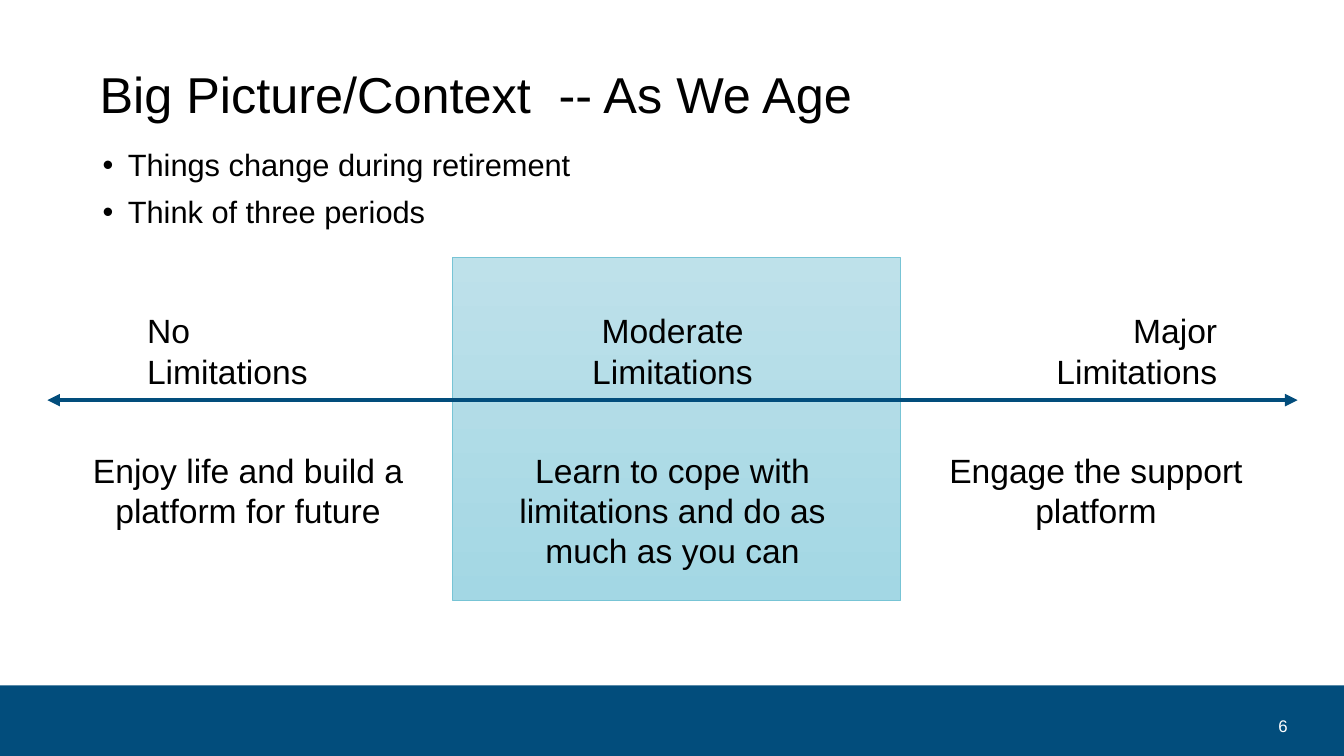
from lxml import etree
from pptx import Presentation
from pptx import util as u
from pptx.dml.color import RGBColor
from pptx.enum import shapes, text
from pptx.oxml.ns import qn

PX = 9144  # 100 px to the inch
COLORS = {
    "navy": "024D7C",
    "panel_top": "BEE1EA",
    "panel_bottom": "A3D7E4",
    "panel_edge": "77C4D5",
    "black": "000000",
    "white": "FFFFFF",
}
LEFT, CENTER, RIGHT = text.PP_ALIGN.LEFT, text.PP_ALIGN.CENTER, text.PP_ALIGN.RIGHT
TOP, MIDDLE = text.MSO_ANCHOR.TOP, text.MSO_ANCHOR.MIDDLE


def rgb(name):
    return RGBColor.from_string(COLORS[name])


def add_text(box, paragraphs, size, align=LEFT, color="black", anchor=TOP):
    """Add a wrapped text box; a newline inside a paragraph is a line break."""
    tf = s.shapes.add_textbox(*(v * PX for v in box)).text_frame
    tf.word_wrap = True
    tf.vertical_anchor = anchor
    for i, words in enumerate(paragraphs):
        p = tf.paragraphs[0] if i == 0 else tf.add_paragraph()
        p.alignment = align
        for j, line in enumerate(words.split("\n")):
            if j:
                p.add_line_break()
            r = p.add_run()
            r.text = line
            r.font.name = "Arial"
            r.font.size = u.Pt(size)
            r.font.color.rgb = rgb(color)
    return tf


prs = Presentation()
prs.slide_width, prs.slide_height = 1333 * PX, 750 * PX
s = prs.slides.add_slide(prs.slide_layouts[6])

# Footer band and middle-period panel
footer, panel = (
    s.shapes.add_shape(shapes.MSO_SHAPE.RECTANGLE, *(v * PX for v in box))
    for box in ((0, 680, 1333, 70), (449, 255, 444, 341))
)
footer.shadow.inherit = panel.shadow.inherit = False
footer.fill.solid()
footer.fill.fore_color.rgb = rgb("navy")
footer.line.fill.background()

panel.fill.gradient()
panel.fill.gradient_angle = 270
for stop, name in zip(panel.fill.gradient_stops, ("panel_top", "panel_bottom")):
    stop.color.rgb = rgb(name)
    stop.position = 0 if name == "panel_top" else 1
panel.line.color.rgb = rgb("panel_edge")
panel.line.width = u.Pt(0.5)

# Title, bullets and slide number
title = add_text((89, 36, 1150, 121), ["Big Picture/Context  -- As We Age"], 36, anchor=MIDDLE)
title.paragraphs[0].line_spacing = 0.9

bullets = add_text((92, 144, 1150, 121),
                   ["Things change during retirement", "Think of three periods"], 22)
for i, p in enumerate(bullets.paragraphs):
    p.line_spacing = 0.9
    if i:
        p.space_before = u.Pt(10)
    pPr = p._p.get_or_add_pPr()
    pPr.set("marL", str(25 * PX))
    pPr.set("indent", str(-25 * PX))
    etree.SubElement(pPr, qn("a:buFont"), typeface="Arial")
    etree.SubElement(pPr, qn("a:buChar"), char="•")

add_text((1197, 700, 90, 40), ["6"], 12, RIGHT, "white", MIDDLE)

# Timeline arrow
arrow = s.shapes.add_connector(shapes.MSO_CONNECTOR.STRAIGHT,
                               47 * PX, 397 * PX, 1287 * PX, 397 * PX)
arrow.line.color.rgb = rgb("navy")
arrow.line.width = u.Pt(3)
for end in ("a:headEnd", "a:tailEnd"):
    etree.SubElement(arrow.line._get_or_add_ln(), qn(end), type="triangle")
etree.SubElement(arrow._element.spPr, qn("a:effectLst"))

# Three periods: label above the arrow, advice below it
periods = [
    ("No\nLimitations", 136, 221, LEFT, "Enjoy life and build a platform for future", 76, 131),
    ("Moderate\nLimitations", 506, 322, CENTER,
     "Learn to cope with limitations and do as much as you can", 497, 131),
    ("Major\nLimitations", 957, 260, RIGHT, "Engage the support platform", 917, 91),
]
for label, label_x, label_w, align, advice, advice_x, advice_h in periods:
    add_text((label_x, 303, label_w, 91), [label], 24, align)
    add_text((advice_x, 441, 340, advice_h), [advice], 24, CENTER)

prs.save("out.pptx")
